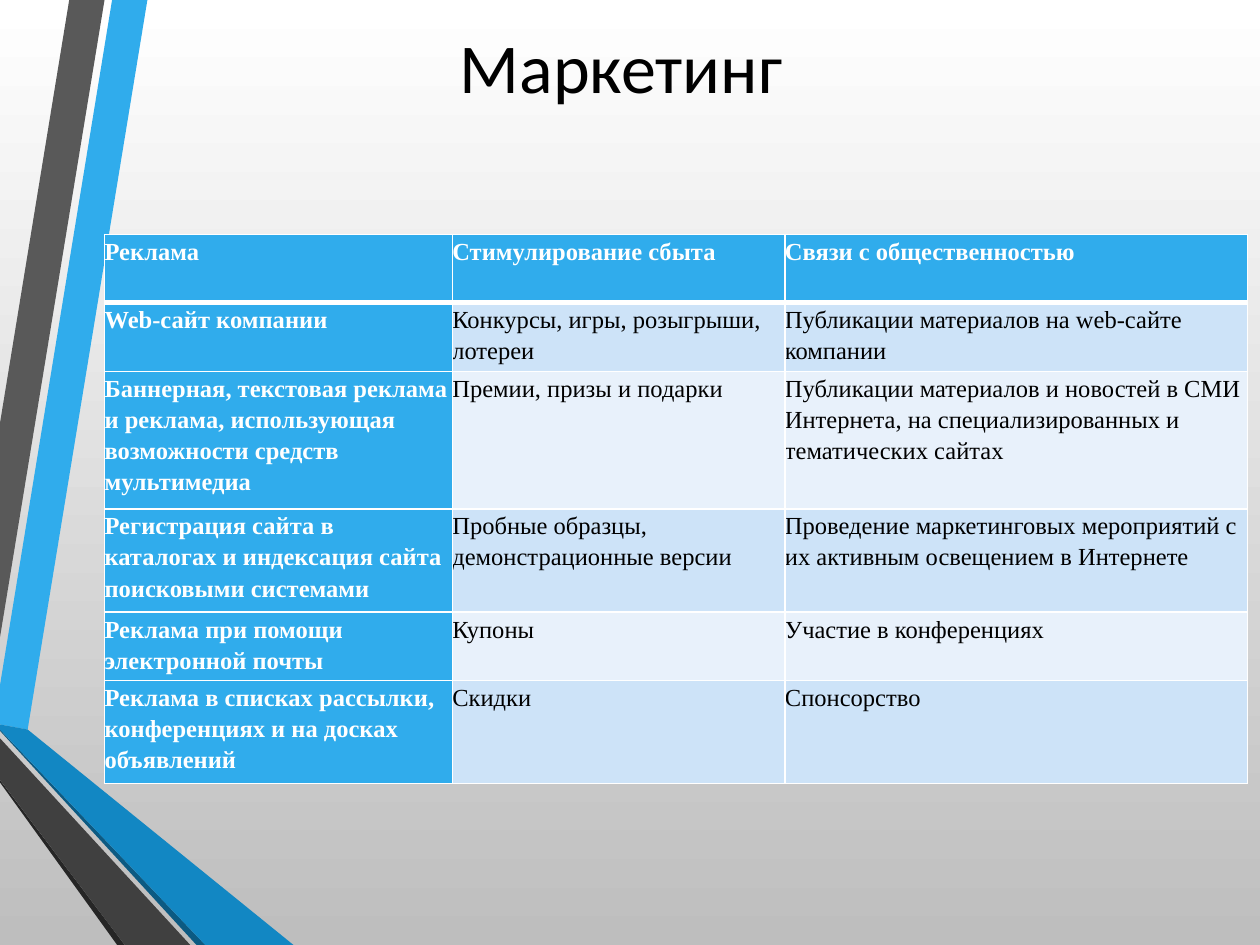
from pptx import Presentation
from pptx.dml.color import RGBColor
from pptx.enum.text import MSO_ANCHOR, PP_ALIGN
from pptx.oxml import parse_xml
from pptx.oxml.ns import nsdecls
from pptx.util import Inches, Pt

COLORS = {
    "white": "FFFFFF", "black": "000000", "backdrop": "BEBEBE",
    "blue": "30ACEC", "blue_mid": "1287C3", "blue_dark": "0C5A82",
    "gray": "595959", "gray_mid": "404040", "gray_dark": "262626",
    "band_odd": "CDE3F8", "band_even": "E8F1FB",
}
RIBBONS = [
    ("blue", [(0, 5.44), (0, 5.75), (0.22, 5.79), (1.17, 0), (0.89, 0)]),
    ("gray", [(0.83, 0), (0.55, 0), (0, 3.36), (0, 5.06)]),
    ("gray_dark", [(0, 6.19), (0, 6.21), (0.93, 7.5), (0.99, 7.5)]),
    ("blue_dark", [(0, 5.79), (0, 5.8), (1.56, 7.5), (1.63, 7.5)]),
    ("blue_mid", [(0, 5.79), (1.63, 7.5), (2.33, 7.5), (0.22, 5.79), (0, 5.75)]),
    ("gray_mid", [(0, 6.19), (0.99, 7.5), (1.51, 7.5), (0, 5.86)]),
]
COLUMN_WIDTHS = [2.76, 2.64, 3.67]
ROW_HEIGHTS = [0.54, 0.55, 1.09, 0.82, 0.54, 0.82]
ROWS = [
    ("Реклама", "Стимулирование сбыта", "Связи с общественностью"),
    ("Web-сайт компании", "Конкурсы, игры, розыгрыши, лотереи",
     "Публикации материалов на web-сайте компании"),
    ("Баннерная, текстовая реклама и реклама, использующая возможности средств мультимедиа",
     "Премии, призы и подарки",
     "Публикации материалов и новостей в СМИ Интернета, на специализированных "
     "и тематических сайтах"),
    ("Регистрация сайта в каталогах и индексация сайта поисковыми системами",
     "Пробные образцы, демонстрационные версии",
     "Проведение маркетинговых мероприятий с их активным освещением в Интернете"),
    ("Реклама при помощи электронной почты", "Купоны", "Участие в конференциях"),
    ("Реклама в списках рассылки, конференциях и на досках объявлений",
     "Скидки", "Спонсорство"),
]


def rgb(name):
    return RGBColor.from_string(COLORS[name])


def set_attributes(target, values):
    for name, value in values.items():
        setattr(target, name, value)


def write(para, text, color, **font_values):
    span = para.add_run()
    span.text = text
    set_attributes(span.font, font_values)
    span.font.color.rgb = rgb(color)


def paint_background(page):
    fill = page.background.fill
    fill.gradient()
    fill.gradient_angle = 270
    for stop, color in zip(fill.gradient_stops, ("white", "backdrop")):
        stop.color.rgb = rgb(color)


def add_ribbons(page):
    for color, points in RIBBONS:
        corners = [(Inches(x), Inches(y)) for x, y in points]
        builder = page.shapes.build_freeform(*corners[0])
        builder.add_line_segments(corners[1:], close=True)
        ribbon = builder.convert_to_shape()
        ribbon.shadow.inherit = False
        ribbon.fill.solid()
        ribbon.fill.fore_color.rgb = rgb(color)
        ribbon.line.fill.background()


def add_title(page, left, top, width, height):
    box = page.shapes.add_textbox(Inches(left), Inches(top), Inches(width), Inches(height))
    set_attributes(box.text_frame, {"word_wrap": True, "vertical_anchor": MSO_ANCHOR.MIDDLE})
    para = box.text_frame.paragraphs[0]
    para.alignment = PP_ALIGN.CENTER
    write(para, "Маркетинг", "black", name="Calibri", size=Pt(40))


def set_borders(cell, widths):
    """Draw white borders; widths are points for left, right, top and bottom."""
    properties = cell._tc.get_or_add_tcPr()
    for index, (side, width) in enumerate(zip("LRTB", widths)):
        properties.insert(index, parse_xml(
            f'<a:ln{side} {nsdecls("a")} w="{Pt(width)}"><a:solidFill>'
            f'<a:srgbClr val="{COLORS["white"]}"/></a:solidFill></a:ln{side}>'))


def add_marketing_table(page, left, top, width, height):
    frame = page.shapes.add_table(len(ROWS), len(COLUMN_WIDTHS), Inches(left), Inches(top),
                                  Inches(width), Inches(height))
    table = frame.table
    for column, size in zip(table.columns, COLUMN_WIDTHS):
        column.width = Inches(size)
    for row, size in zip(table.rows, ROW_HEIGHTS):
        row.height = Inches(size)
    for r, texts in enumerate(ROWS):
        for c, text in enumerate(texts):
            cell = table.cell(r, c)
            heading = r == 0 or c == 0
            band = "band_odd" if r % 2 else "band_even"
            set_attributes(cell, dict.fromkeys(
                ("margin_left", "margin_right", "margin_top", "margin_bottom"), 0))
            cell.fill.solid()
            cell.fill.fore_color.rgb = rgb("blue" if heading else band)
            set_borders(cell, (1, 1, 3 if r == 1 else 1, 3 if r == 0 else 1))
            para = cell.text_frame.paragraphs[0]
            set_attributes(para, {"line_spacing": 1.15, "space_after": Pt(10)})
            write(para, text, "white" if heading else "black",
                  name="Times New Roman", size=Pt(14), bold=heading)


def main():
    deck = Presentation()
    set_attributes(deck, {"slide_width": Inches(10), "slide_height": Inches(7.5)})
    page = deck.slides.add_slide(deck.slide_layouts[6])
    paint_background(page)
    add_ribbons(page)
    add_title(page, 2.01, 0, 5.84, 1.04)
    add_marketing_table(page, 0.83, 1.86, sum(COLUMN_WIDTHS), sum(ROW_HEIGHTS))
    deck.save("out.pptx")


if __name__ == "__main__":
    main()
